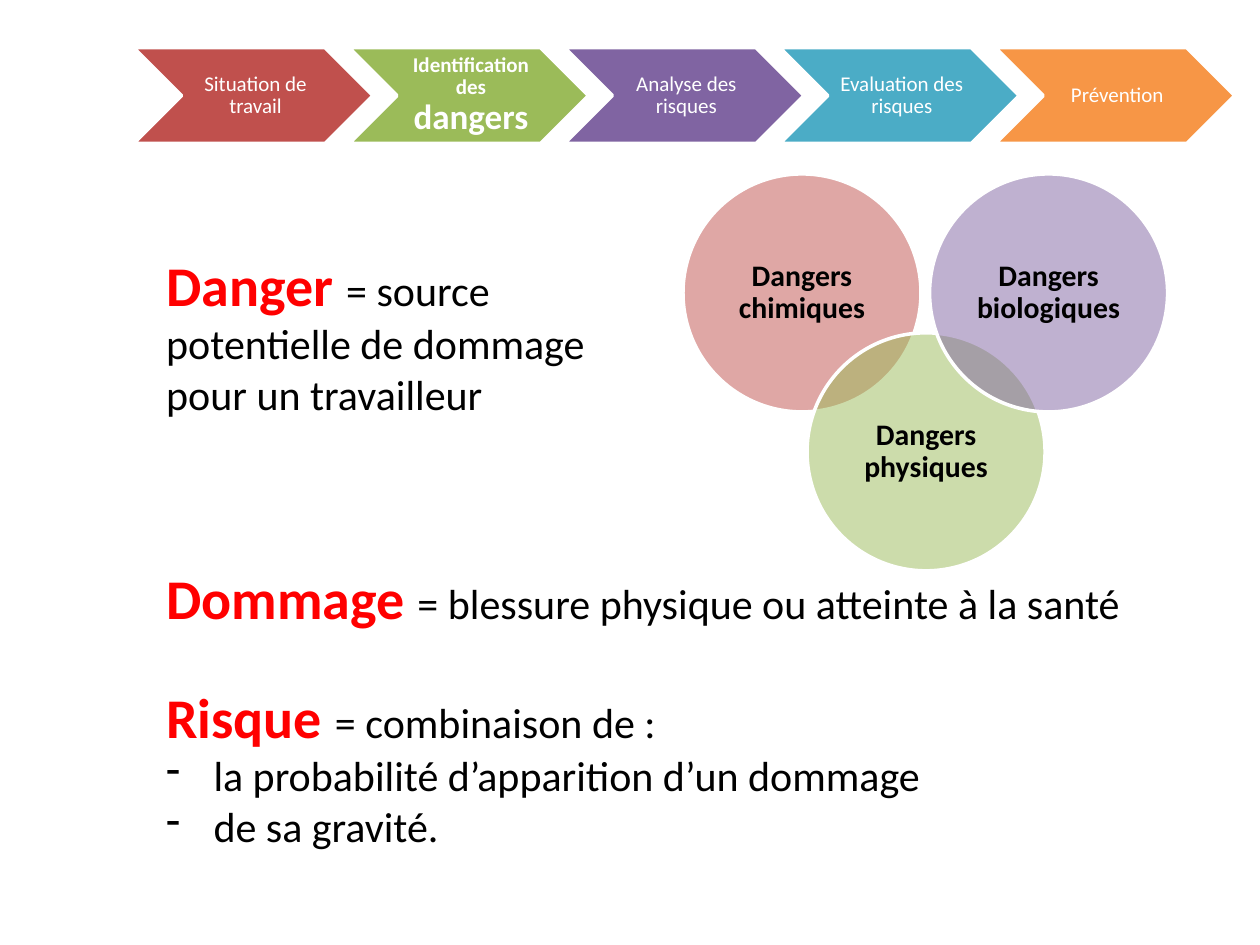
from lxml import etree
from pptx import Presentation
from pptx.dml.color import RGBColor
from pptx.enum import shapes, text
from pptx.oxml.ns import qn
from pptx.util import Pt

HEX = {"red": "C0504D", "green": "9BBB59", "violet": "8064A2", "blue": "4BACC6",
       "orange": "F79646", "white": "FFFFFF", "black": "000000", "term": "FF0000"}
FONT = "Calibri"

# Content: a run is (words, size, bold, colour)
STEPS = [
    ("red", [("Situation de travail", 12, False, "white")]),
    ("green", [("Identification des ", 12, True, "white"), ("dangers", 20, True, "white")]),
    ("violet", [("Analyse des risques", 12, False, "white")]),
    ("blue", [("Evaluation des risques", 12, False, "white")]),
    ("orange", [("Prévention", 12, False, "white")]),
]
CIRCLES = [  # name, colour, left, top
    ("Dangers chimiques", "red", 390.3, 99.4),
    ("Dangers physiques", "green", 461.2, 190.2),
    ("Dangers biologiques", "violet", 531.2, 99.4),
]
DANGER = ("Danger ", "= source potentielle de dommage pour un travailleur")
DAMAGE = ("Dommage ", "= blessure physique ou atteinte à la santé")
RISK = ("Risque ", "= combinaison de :")
FACTORS = ["la probabilité d’apparition d’un dommage", "de sa gravité."]


def color(name):
    return RGBColor.from_string(HEX[name])


def add_runs(para, runs):
    for words, size, bold, tone in runs:
        run = para.add_run()
        run.text = words
        run.font.name, run.font.size, run.font.bold = FONT, Pt(size), bold
        run.font.color.rgb = color(tone)


def add_shape(kind, box, fill, runs, pads, alpha=None):
    shape = slide.shapes.add_shape(kind, *map(Pt, box))
    shape.shadow.inherit = False
    shape.fill.solid()
    shape.fill.fore_color.rgb = color(fill)
    if alpha:
        tone = shape.fill._xPr.find(qn("a:solidFill"))[0]
        etree.SubElement(tone, qn("a:alpha"), val=str(alpha * 1000))
    shape.line.color.rgb = color("white")
    shape.line.width = Pt(2)
    frame = shape.text_frame
    frame.word_wrap = True
    frame.vertical_anchor = text.MSO_ANCHOR.MIDDLE
    (frame.margin_left, frame.margin_top,
     frame.margin_right, frame.margin_bottom) = map(Pt, pads)
    para = frame.paragraphs[0]
    para.alignment = text.PP_ALIGN.CENTER
    para.line_spacing = 0.9
    add_runs(para, runs)


def add_frame(box):
    frame = slide.shapes.add_textbox(*map(Pt, box)).text_frame
    frame.word_wrap = True
    return frame


def define(para, pair):
    term, rest = pair
    add_runs(para, [(term, 32, True, "term"), (rest, 24, False, "black")])


deck = Presentation()
deck.slide_width, deck.slide_height = Pt(720), Pt(540)
slide = deck.slides.add_slide(deck.slide_layouts[6])

# Overlapping circles of danger types
for name, tone, left, top in CIRCLES:
    add_shape(shapes.MSO_SHAPE.OVAL, (left, top, 136, 136), tone,
              [(name, 17, True, "black")], (5, 5, 5, 5), alpha=50)

# Row of process steps
for i, (tone, runs) in enumerate(STEPS):
    add_shape(shapes.MSO_SHAPE.CHEVRON, (76.4 + i * 123.1, 27.3, 136.8, 54.7), tone,
              runs, (3.8, 1.3, 1.3, 1.3))

# Definitions
define(add_frame((87.9, 139.7, 260.6, 104.4)).paragraphs[0], DANGER)
frame = add_frame((87.9, 318.7, 601.2, 201))
define(frame.paragraphs[0], DAMAGE)
para = frame.add_paragraph()
para.space_before = Pt(29.3)
define(para, RISK)

# Dashed list of risk factors
for words in FACTORS:
    para = frame.add_paragraph()
    props = para._p.get_or_add_pPr()
    props.set("marL", str(Pt(27)))
    props.set("indent", str(-Pt(27)))
    etree.SubElement(props, qn("a:buChar"), char="-")
    add_runs(para, [(words, 24, False, "black")])

deck.save("out.pptx")
